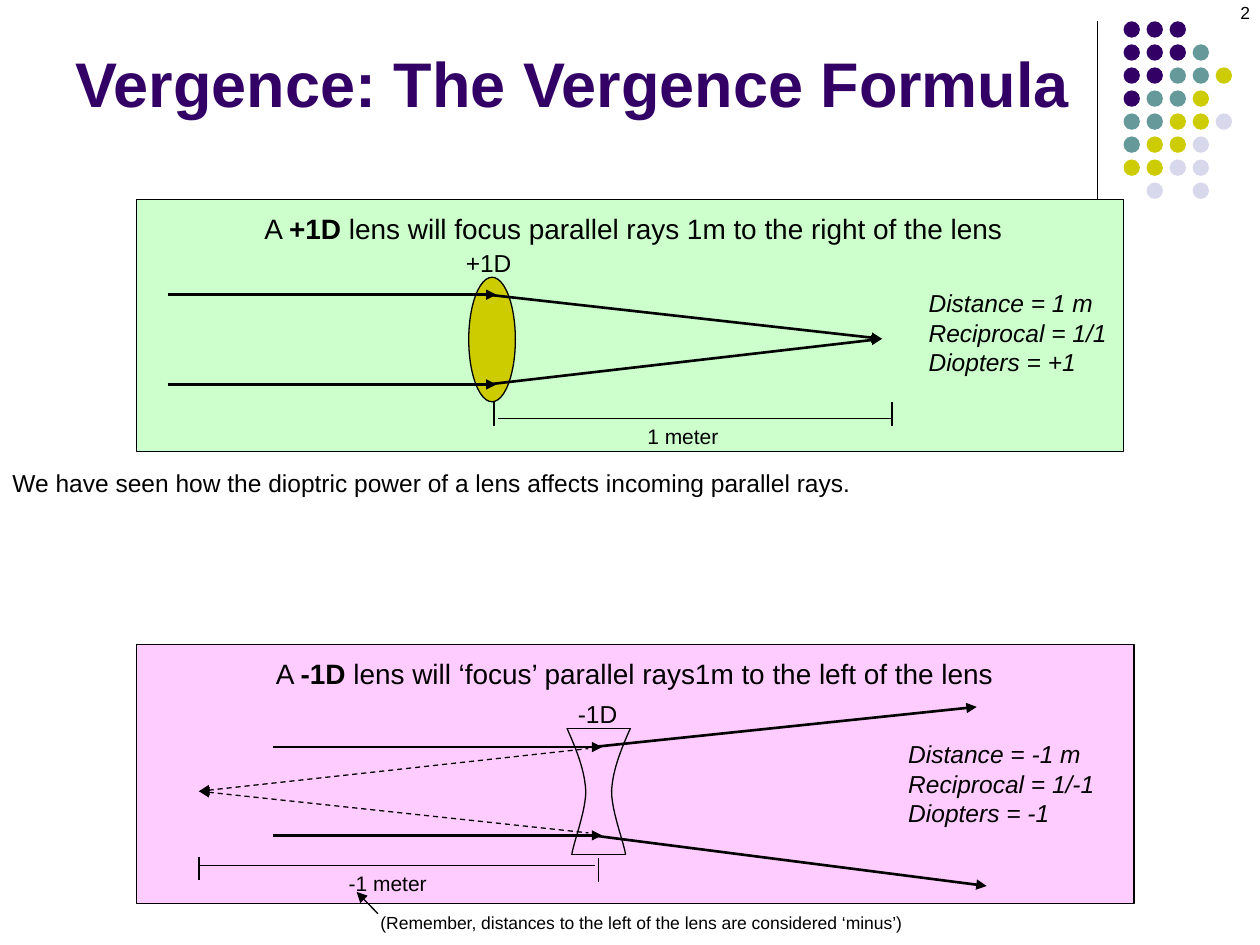
from lxml.etree import SubElement
from pptx import Presentation
from pptx.dml.color import RGBColor
from pptx.enum.dml import MSO_LINE_DASH_STYLE as Dash
from pptx.enum.shapes import MSO_CONNECTOR as Connector, MSO_SHAPE as Shape
from pptx.enum.text import MSO_ANCHOR as Anchor, MSO_AUTO_SIZE as AutoSize, PP_ALIGN as Align
from pptx.oxml.ns import qn
from pptx.util import Cm, Pt

deck = Presentation()
deck.slide_width, deck.slide_height = Cm(25.4), Cm(19.05)
slide = deck.slides.add_slide(deck.slide_layouts[6])
shapes = slide.shapes
color = RGBColor.from_string
BLACK, PURPLE, TEAL, OLIVE, LILAC = "000000", "330066", "669999", "CCCC00", "D8D8EC"


def write(box, paragraphs, size, ink=BLACK, wrap=False, **font_format):
    """Add a text box; each paragraph is a list of (text, bold) runs."""
    frame = shapes.add_textbox(*map(Cm, box)).text_frame
    frame.word_wrap = wrap
    frame.auto_size = AutoSize.NONE if wrap else AutoSize.SHAPE_TO_FIT_TEXT
    for index, runs in enumerate(paragraphs):
        paragraph = frame.add_paragraph() if index else frame.paragraphs[0]
        for text, bold in runs:
            run = paragraph.add_run()
            run.text = text
            run.font.color.rgb = color(ink)
            look = {"name": "Arial", "size": Pt(size), "bold": bold, **font_format}
            for attribute, value in look.items():
                setattr(run.font, attribute, value)
    return frame


def draw_line(x1, y1, x2, y2, width=0.75, arrow=None, dash=None):
    """Add a straight line; arrow is 'headEnd' (start), 'tailEnd' (end) or None."""
    line = shapes.add_connector(Connector.STRAIGHT, *map(Cm, (x1, y1, x2, y2)))
    for attribute, value in {"width": Pt(width), "dash_style": dash}.items():
        setattr(line.line, attribute, value)
    line.line.color.rgb = color(BLACK)
    properties = line._element.spPr
    if arrow:
        SubElement(properties.find(qn("a:ln")), qn("a:" + arrow), type="triangle")
    SubElement(properties, qn("a:effectLst"))


# Corner ornament: a rule and a grid of dots
draw_line(22.12, 0.43, 22.12, 4.65)
dot_colors = {"P": PURPLE, "T": TEAL, "O": OLIVE, "L": LILAC}
dot_rows = ["PPP", "PPPT", "PPTTO", "PTTO", "TTOOL", "TOOL", "OOLL", " L L"]
dot_pitch = 3.25 / 7
ovals = [(22.65 + dot_pitch * column, 0.43 + dot_pitch * row, 0.33, 0.33,
          dot_colors[key], False)
         for row, keys in enumerate(dot_rows)
         for column, key in enumerate(keys) if key != " "]

# Panels, dots and the convex lens
panels = [(2.75, 4.02, 19.9, 5.08, "CCFFCC", True),
          (2.75, 13, 20.11, 5.21, "FFCCFF", True)]
convex_lens = (9.45, 5.59, 0.94, 2.51, OLIVE, True)
for kind, items in ((Shape.RECTANGLE, panels), (Shape.OVAL, ovals + [convex_lens])):
    for *box, fill, outlined in items:
        part = shapes.add_shape(kind, *map(Cm, box))
        part.shadow.inherit = False
        part.fill.solid()
        part.fill.fore_color.rgb = color(fill)
        if outlined:
            part.line.color.rgb = color(BLACK)
            part.line.width = Pt(0.75)
        else:
            part.line.fill.background()

# Concave lens: two mirrored curves between two flat edges
lens_axis = 12.07
curves = [((11.43, 14.68), (11.61, 15.09), (11.79, 15.52), (11.81, 15.95)),
          ((11.81, 15.95), (11.81, 16.36), (11.56, 16.99), (11.53, 17.22))]
steps = 12
left_side = []
for a, b, c, d in curves:
    for step in range(steps + 1):
        t = step / steps
        weights = ((1 - t) ** 3, 3 * t * (1 - t) ** 2, 3 * t * t * (1 - t), t ** 3)
        left_side.append([sum(w * p[i] for w, p in zip(weights, (a, b, c, d)))
                          for i in (0, 1)])
right_side = [(2 * lens_axis - x, y) for x, y in left_side]
for side in (left_side, right_side):
    points = [(Cm(x), Cm(y)) for x, y in side]
    outline = shapes.build_freeform(*points[0])
    outline.add_line_segments(points[1:], close=False)
    edge = outline.convert_to_shape()
    edge.shadow.inherit = False
    edge.fill.background()
    edge.line.color.rgb = color(BLACK)
    edge.line.width = Pt(0.75)
draw_line(11.43, 14.68, 12.7, 14.68)
draw_line(11.51, 17.22, 12.62, 17.22)

# Light rays
rays = [(3.38, 5.94, 10.01, 5.94), (3.38, 7.75, 10.01, 7.75),
        (9.83, 7.75, 17.78, 6.83), (9.83, 5.94, 17.78, 6.83),
        (5.51, 15.06, 12.14, 15.06), (5.51, 16.84, 12.14, 16.84),
        (11.94, 16.84, 19.89, 17.86), (11.94, 15.06, 19.69, 14.25)]
for ray in rays:
    draw_line(*ray, width=1.5, arrow="tailEnd")
for lens_y in (15.09, 16.79):
    draw_line(4.01, 15.95, 11.86, lens_y, arrow="headEnd", dash=Dash.DASH)

# One-meter dimension lines with end ticks
for dimension in [(10.03, 8.43, 17.98, 8.43), (9.96, 8.1, 9.96, 8.59),
                  (17.98, 8.1, 17.98, 8.59), (4.01, 17.45, 11.99, 17.45),
                  (4.01, 17.27, 4.01, 17.73), (12.07, 17.3, 12.07, 17.78)]:
    draw_line(*dimension)

# Panel headings: box, left margin, first-line indent, power, ending
headings = [
    ((5.08, 4.14, 15.88, 1.78), 0.97, -0.97, "+1D",
     " lens will focus parallel rays 1m to the right of the lens"),
    ((3.38, 13.11, 17.78, 1.07), 2.74, -0.81, "-1D",
     " lens will ‘focus’ parallel rays1m to the left of the lens")]
for box, margin, indent, power, ending in headings:
    heading = write(box, [[("A ", False), (power, True), (ending, False)]], 16, wrap=True)
    paragraph = heading.paragraphs[0]
    paragraph.space_before = Pt(3.2)
    for attribute, length in {"marL": margin, "indent": indent}.items():
        paragraph._p.get_or_add_pPr().set(attribute, str(Cm(length)))

# Labels, statement and remark
labels = [((9.14, 4.88, 1.6, 0.84), "+1D", 14),
          ((11.4, 13.97, 1.4, 0.84), "-1D", 14),
          ((12.8, 8.41, 2.1, 0.76), "1 meter", 12),
          ((6.78, 17.42, 2.2, 0.76), "-1 meter", 12),
          ((0, 9.32, 17.48, 0.84), "We have seen how the dioptric power of a lens "
           "affects incoming parallel rays.", 14),
          ((7.42, 18.26, 11.02, 0.69), "(Remember, distances to the left of the lens "
           "are considered ‘minus’)", 10)]
for box, text, size in labels:
    write(box, [[(text, False)]], size)
draw_line(7.62, 18.42, 7.19, 17.98, arrow="tailEnd")

# Distance, reciprocal and diopters
for box, facts in [
        ((18.47, 5.69, 4.11, 2.06), ("Distance = 1 m", "Reciprocal = 1/1", "Diopters = +1")),
        ((18.06, 14.78, 4.29, 2.06), ("Distance = -1 m", "Reciprocal = 1/-1", "Diopters = -1"))]:
    write(box, [[(fact, False)] for fact in facts], 14, italic=True)

# Title and page number
title = write((1.27, 0.33, 20.96, 2.21), [[("Vergence: The Vergence Formula", True)]],
              36, PURPLE, wrap=True)
title.vertical_anchor = Anchor.BOTTOM
page_number = write((19.53, -0.08, 5.92, 1.27), [[("2", False)]], 10, wrap=True)
page_number.paragraphs[0].alignment = Align.RIGHT

deck.save("out.pptx")
